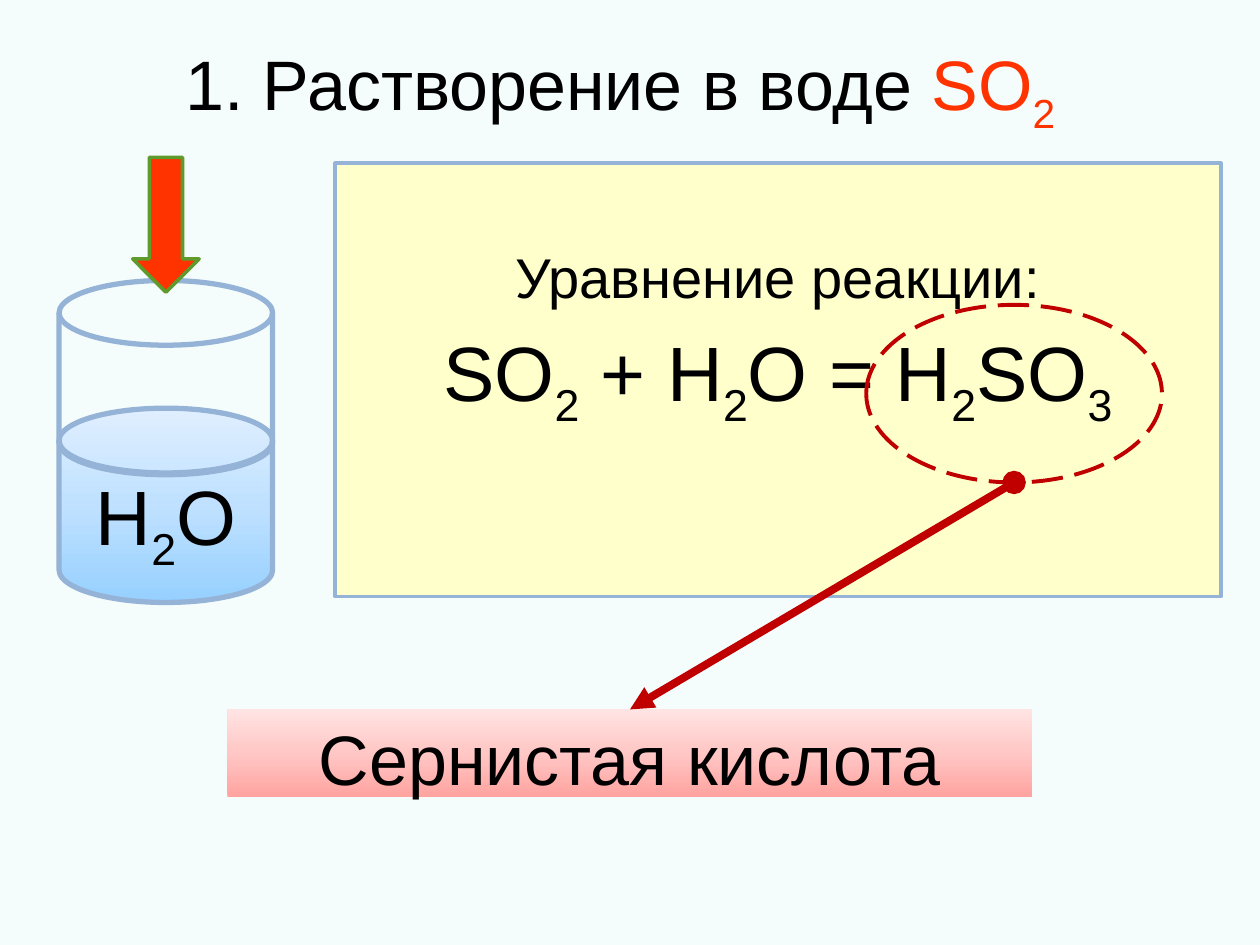
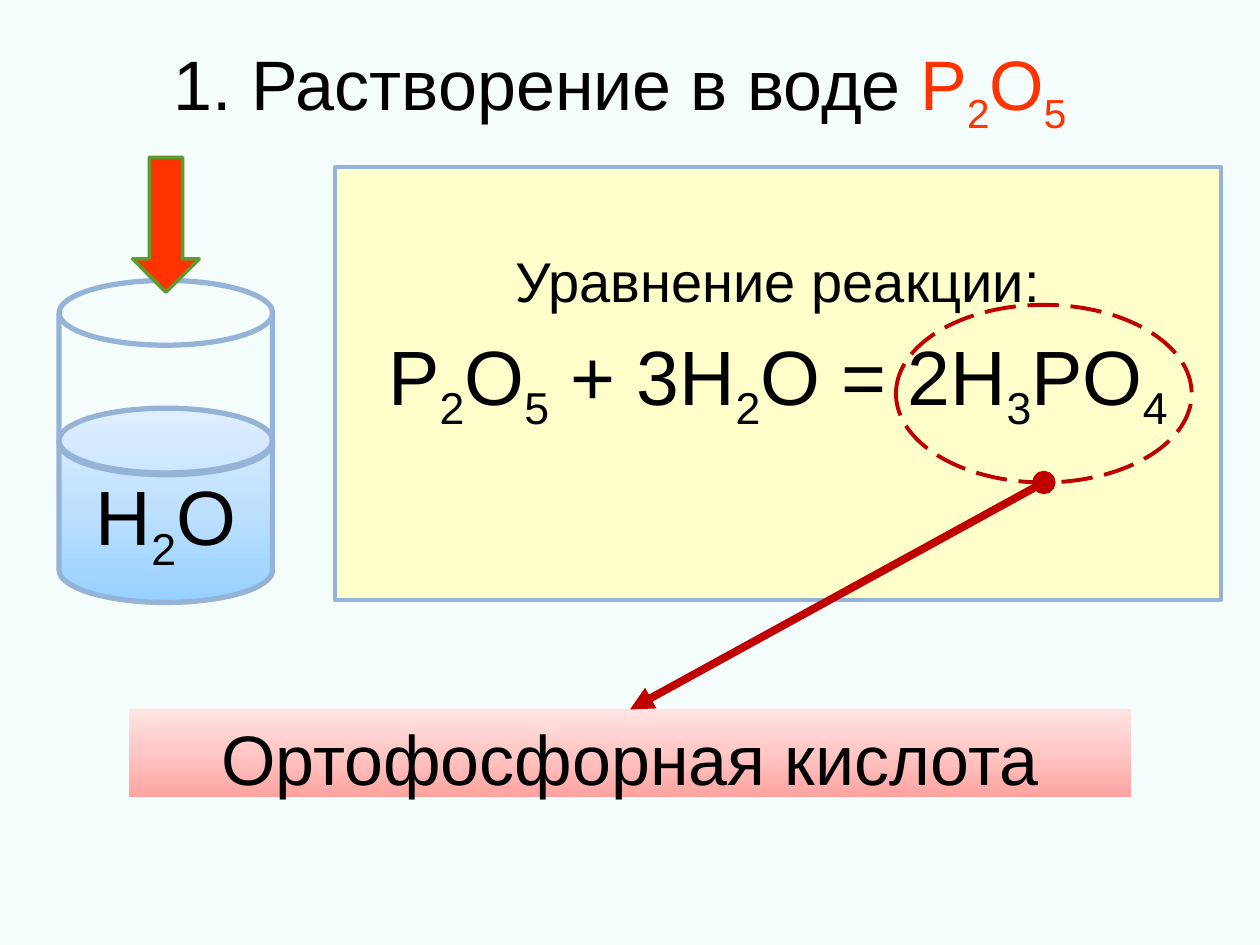
from copy import deepcopy
from dataclasses import dataclass

from lxml.etree import SubElement
from pptx import Presentation
from pptx.dml.color import RGBColor
from pptx.enum.dml import MSO_LINE_DASH_STYLE as Dash
from pptx.enum.shapes import MSO_CONNECTOR as Connector, MSO_SHAPE as Kind
from pptx.enum.text import MSO_ANCHOR as Anchor, PP_ALIGN as Align
from pptx.oxml.ns import qn
from pptx.util import Pt


@dataclass(frozen=True)
class Theme:
    font: str = "Arial"
    background: str = "F4FDFC"
    ink: str = "000000"
    accent: str = "FF3300"
    arrow_edge: str = "5E9B2C"
    outline: str = "95B3D7"
    panel: str = "FFFFCC"
    marker: str = "C00000"
    water: tuple = ("96D0FF", "BFE1FF", "E0EFFF")
    answer: tuple = ("FFA3A0", "FFC7C5", "FFE4E3")
    title_size: int = 40
    formula_size: int = 44
    caption_size: int = 32


theme = Theme()


def write(paragraph, text, *, size, color=theme.ink, space_before=0):
    paragraph.alignment = Align.CENTER
    paragraph.space_before = Pt(space_before)
    first, *rest = text.split("_")
    pieces = [(first, False)]
    for part in rest:
        pieces += [(part[0], True), (part[1:], False)]
    for piece, subscript in pieces:
        if not piece:
            continue
        run = paragraph.add_run()
        run.text = piece
        run.font.name = theme.font
        run.font.size = Pt(size)
        run.font.color.rgb = RGBColor.from_string(color)
        if subscript:
            run._r.get_or_add_rPr().set("baseline", "-25000")


def draw(shapes, kind, box, *, fill=None, line=None, width=0):
    shape = shapes.add_shape(kind, *map(Pt, box))
    shape.shadow.inherit = False
    if isinstance(fill, tuple):
        shape.fill.gradient()
        shape.fill.gradient_angle = 90
        stop_list = shape._element.find(".//" + qn("a:gsLst"))
        stop_list.append(deepcopy(stop_list[-1]))
        for index, stop in enumerate(shape.fill.gradient_stops):
            stop.position = index / 2
            stop.color.rgb = RGBColor.from_string(fill[index])
    elif fill:
        shape.fill.solid()
        shape.fill.fore_color.rgb = RGBColor.from_string(fill)
    else:
        shape.fill.background()
    if line:
        shape.line.color.rgb = RGBColor.from_string(line)
        shape.line.width = Pt(width)
    else:
        shape.line.fill.background()
    return shape


reactions = [
    dict(oxide="SO_2", equation="SO_2 + H_2O = H_2SO_3", acid="Сернистая кислота",
         answer_width=460, panel_top=93.4, ring_left=495),
    dict(oxide="P_2O_5", equation="P_2O_5 + 3H_2O = 2H_3PO_4", acid="Ортофосфорная кислота",
         answer_width=573, panel_top=95.6, ring_left=512),
]
ring_top, ring_width, ring_height = 174.2, 169, 101.5

presentation = Presentation()
presentation.slide_width, presentation.slide_height = Pt(720), Pt(540)

for reaction in reactions:
    slide = presentation.slides.add_slide(presentation.slide_layouts[6])
    slide.background.fill.solid()
    slide.background.fill.fore_color.rgb = RGBColor.from_string(theme.background)

    answer_width = reaction["answer_width"]
    answer = draw(slide.shapes, Kind.RECTANGLE,
                  ((720 - answer_width) / 2, 405.4, answer_width, 50), fill=theme.answer)
    answer.text_frame.word_wrap = True
    answer.text_frame.vertical_anchor = Anchor.TOP
    write(answer.text_frame.paragraphs[0], reaction["acid"], size=theme.title_size, space_before=8)

    title = slide.shapes.add_textbox(Pt(36), Pt(16.5), Pt(648), Pt(68)).text_frame
    title.word_wrap = True
    title.vertical_anchor = Anchor.MIDDLE
    heading = title.paragraphs[0]
    write(heading, "1. Растворение в воде ", size=theme.title_size)
    write(heading, reaction["oxide"] + " ", size=theme.title_size, color=theme.accent)

    beaker = slide.shapes.add_group_shape().shapes
    water = draw(beaker, Kind.FLOWCHART_MAGNETIC_DISK, (33.8, 233.3, 122, 111),
                 fill=theme.water, line=theme.outline, width=3)
    water.text_frame.word_wrap = False
    water.text_frame.vertical_anchor = Anchor.MIDDLE
    write(water.text_frame.paragraphs[0], "H_2O", size=theme.formula_size)
    draw(beaker, Kind.FLOWCHART_MAGNETIC_DISK, (33.8, 160.3, 122, 111),
         line=theme.outline, width=3)
    draw(beaker, Kind.DOWN_ARROW, (75.8, 90, 38, 77),
         fill=theme.accent, line=theme.arrow_edge, width=2)

    panel = draw(slide.shapes, Kind.RECTANGLE, (191.5, reaction["panel_top"], 506, 247.5),
                 fill=theme.panel, line=theme.outline, width=2.25).text_frame
    panel.word_wrap = True
    panel.vertical_anchor = Anchor.TOP
    panel.margin_top = Pt(45)
    write(panel.paragraphs[0], "Уравнение реакции:", size=theme.caption_size, space_before=6.4)
    write(panel.add_paragraph(), reaction["equation"], size=theme.formula_size, space_before=8.8)

    ring_left = reaction["ring_left"]
    ring = draw(slide.shapes, Kind.FLOWCHART_CONNECTOR,
                (ring_left, ring_top, ring_width, ring_height), line=theme.marker, width=2.25)
    ring.line.dash_style = Dash.LONG_DASH

    pointer = slide.shapes.add_connector(
        Connector.STRAIGHT, Pt(ring_left + ring_width / 2), Pt(ring_top + ring_height),
        Pt(360), Pt(405.4))
    pointer.end_connect(answer, 0)
    pointer.line.color.rgb = RGBColor.from_string(theme.marker)
    pointer.line.width = Pt(4.5)
    line_element = pointer.line._get_or_add_ln()
    SubElement(line_element, qn("a:headEnd"), type="oval")
    SubElement(line_element, qn("a:tailEnd"), type="triangle")
    SubElement(pointer._element.spPr, qn("a:effectLst"))

presentation.save("out.pptx")
